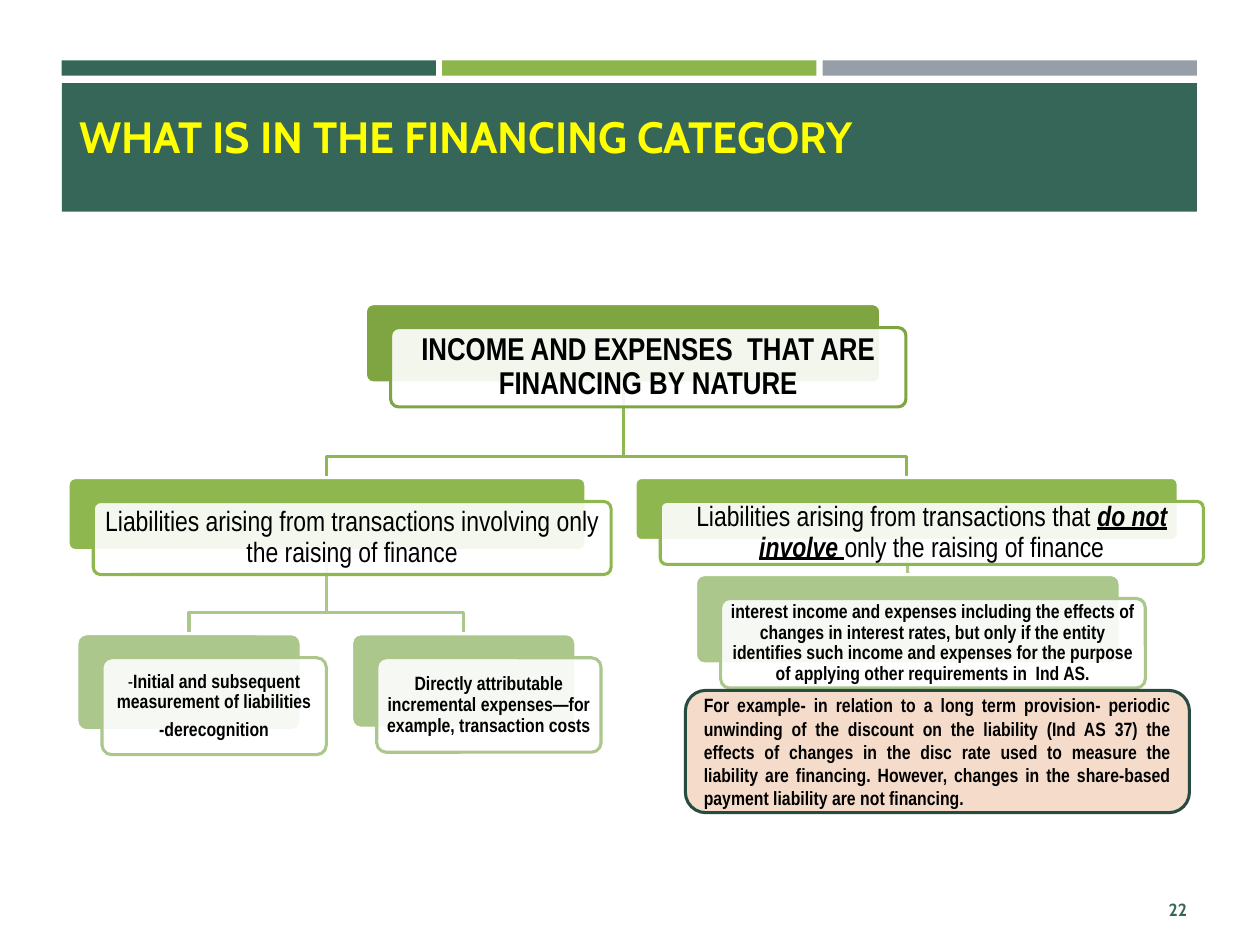
import pptx
import pptx.util
from pptx.dml.color import RGBColor
from pptx.enum.shapes import MSO_CONNECTOR, MSO_SHAPE
from pptx.enum.text import MSO_ANCHOR, PP_ALIGN
from pptx.oxml.ns import qn
from lxml import etree
from pptx.util import Inches, Pt

DARK_GREEN = RGBColor(0x36, 0x66, 0x58)
DEEP_GREEN = RGBColor(0x28, 0x4B, 0x41)
LIME = RGBColor(0x8C, 0xB6, 0x4A)
GREY = RGBColor(0x96, 0x9F, 0xA7)
ROOT_GREEN = RGBColor(0x7F, 0xA5, 0x43)
BRANCH_GREEN = RGBColor(0x8E, 0xB7, 0x4F)
LEAF_GREEN = RGBColor(0xAB, 0xC7, 0x8B)
PEACH = RGBColor(0xF5, 0xDC, 0xCA)
YELLOW = RGBColor(0xFF, 0xFF, 0x00)
WHITE = RGBColor(0xFF, 0xFF, 0xFF)
BLACK = RGBColor(0x00, 0x00, 0x00)

# Cards of the tree: left, top, width, height of the rear panel
ROOT = (2.9, 2.41, 4.09, 0.63)
RAISING = (0.54, 3.79, 4.11, 0.58)
NOT_RAISING = (5.04, 3.79, 4.31, 0.5)
MEASUREMENT = (0.61, 5.03, 1.78, 0.77)
DIRECT_COSTS = (2.79, 5.03, 1.78, 0.75)
INTEREST = (5.52, 4.56, 3.37, 0.71)


def add_run(paragraph, text, font="Arial Narrow", size=11, color=BLACK,
            bold=False, italic=False, underline=False):
    run = paragraph.add_run()
    run.text = text
    run.font.name = font
    run.font.size = Pt(size)
    run.font.color.rgb = color
    run.font.bold = bold
    run.font.italic = italic
    run.font.underline = underline


class SlideBuilder:
    line_width = Pt(1.75)
    card_shift = (0.2, 0.19)
    bend_gap = 0.17

    def __init__(self, slide):
        self.slide = slide
        self.shapes = slide.shapes

    def fill_text(self, shape, paragraphs, align=PP_ALIGN.CENTER, inset=None,
                  spacing=None, gap=0):
        """Fill a shape with paragraphs, each a list of (text, format) runs."""
        frame = shape.text_frame
        frame.word_wrap = True
        frame.vertical_anchor = MSO_ANCHOR.MIDDLE
        if inset is not None:
            frame.margin_left = frame.margin_right = Inches(inset)
            frame.margin_top = frame.margin_bottom = Inches(inset)
        for index, runs in enumerate(paragraphs):
            paragraph = frame.add_paragraph() if index else frame.paragraphs[0]
            paragraph.alignment = align
            if spacing:
                paragraph.line_spacing = spacing
            if index:
                paragraph.space_before = Pt(gap)
            for text, style in runs:
                add_run(paragraph, text, **style)

    def label(self, box, text, align, **style):
        label = self.shapes.add_textbox(*map(Inches, box))
        self.fill_text(label, [[(text, style)]], align)

    def panel(self, box, fill, line=None, kind=MSO_SHAPE.RECTANGLE,
              corner=None, opacity=None):
        panel = self.shapes.add_shape(kind, *map(Inches, box))
        panel.shadow.inherit = False
        panel.fill.solid()
        panel.fill.fore_color.rgb = fill
        if opacity is not None:
            solid_fill = panel._element.spPr.find(qn("a:solidFill"))
            color = solid_fill.find(qn("a:srgbClr"))
            etree.SubElement(color, qn("a:alpha"), val=str(opacity * 1000))
        if corner is not None:
            panel.adjustments[0] = corner
        if line is None:
            panel.line.fill.background()
        else:
            panel.line.color.rgb = line
            panel.line.width = self.line_width
        return panel

    def card(self, box, color, paragraphs, inset):
        """A coloured rear panel with a translucent text panel shifted over it."""
        left, top, width, height = box
        dx, dy = self.card_shift
        rounded = dict(kind=MSO_SHAPE.ROUNDED_RECTANGLE, corner=0.1)
        rear = self.panel(box, color, WHITE, **rounded)
        front = self.panel((left + dx, top + dy, width, height), WHITE, color,
                           opacity=90, **rounded)
        self.fill_text(front, paragraphs, inset=inset, spacing=0.9, gap=4)
        return rear

    def elbow(self, parent, child, color):
        """A bent line from the parent's bottom middle to the child's top middle."""
        start_x, end_x = (box[0] + box[2] / 2 for box in (parent, child))
        start_y, end_y = parent[1] + parent[3], child[1]
        bend_y = end_y - self.bend_gap
        outline = self.shapes.build_freeform(Inches(start_x), Inches(start_y))
        outline.add_line_segments(
            [(Inches(x), Inches(y)) for x, y in
             ((start_x, bend_y), (end_x, bend_y), (end_x, end_y))],
            close=False)
        link = outline.convert_to_shape()
        link.shadow.inherit = False
        link.fill.background()
        link.line.color.rgb = color
        link.line.width = self.line_width

    def connector(self, color):
        link = self.shapes.add_connector(MSO_CONNECTOR.STRAIGHT, 0, 0, 0, 0)
        link.line.color.rgb = color
        link.line.width = self.line_width
        etree.SubElement(link._element.spPr, qn("a:effectLst"))
        return link


def main():
    deck = pptx.Presentation()
    deck.slide_width, deck.slide_height = Inches(10), Inches(7.5)
    page = SlideBuilder(deck.slides.add_slide(deck.slide_layouts[6]))

    # Header band and title
    for column, color in enumerate((DARK_GREEN, LIME, GREY)):
        page.panel((0.49 + column * 3.02, 0.48, 2.97, 0.12), color)
    page.panel((0.49, 0.66, 9.01, 1.02), DARK_GREEN)
    page.label((0.53, 0.69, 9.05, 0.78), "WHAT IS IN THE FINANCING CATEGORY",
               PP_ALIGN.LEFT, font="Cabin", size=25, color=YELLOW, bold=True)

    # Page number
    page.label((8.68, 7.02, 0.84, 0.4), "22", PP_ALIGN.RIGHT,
               font="Cabin", size=10, color=DARK_GREEN, bold=True)

    # Tree links, behind the cards
    interest_link = page.connector(LEAF_GREEN)
    for parent, children, color in (
            (RAISING, (DIRECT_COSTS, MEASUREMENT), LEAF_GREEN),
            (ROOT, (NOT_RAISING, RAISING), BRANCH_GREEN)):
        for child in children:
            page.elbow(parent, child, color)

    # Tree cards
    heading = dict(size=18, bold=True)
    branch = dict(size=16)
    stressed = dict(size=16, bold=True, italic=True, underline=True)
    detail = dict(size=11, bold=True)
    page.card(ROOT, ROOT_GREEN, [[
        ("INCOME AND EXPENSES  THAT ARE FINANCING BY NATURE", heading)]], 0.07)
    page.card(RAISING, BRANCH_GREEN, [[
        ("Liabilities arising from transactions involving only the raising "
         "of finance", branch)]], 0.07)
    page.card(MEASUREMENT, LEAF_GREEN, [
        [("-", dict(size=11)),
         ("Initial and subsequent measurement of liabilities", detail)],
        [("-derecognition", detail)]], 0.05)
    page.card(DIRECT_COSTS, LEAF_GREEN, [[
        ("Directly attributable incremental expenses—for example, "
         "transaction costs", detail)]], 0.05)
    not_raising = page.card(NOT_RAISING, BRANCH_GREEN, [[
        ("Liabilities arising from transactions that ", branch),
        ("do not involve ", stressed),
        ("only the raising of finance", branch)]], 0.07)
    interest = page.card(INTEREST, LEAF_GREEN, [[
        ("interest income and expenses including the effects of changes in "
         "interest rates, but only if the entity identifies such income and "
         "expenses for the purpose of applying other requirements in  Ind AS.",
         detail)]], 0.05)
    interest_link.begin_connect(not_raising, 2)
    interest_link.end_connect(interest, 0)

    # Worked example
    example = page.panel((5.44, 5.48, 4, 0.97), PEACH, DEEP_GREEN,
                         kind=MSO_SHAPE.ROUNDED_RECTANGLE)
    page.fill_text(example, [[
        ("For example- in relation to a long term provision- periodic "
         "unwinding of the discount on the liability (Ind AS 37) the effects "
         "of changes in the disc rate used to measure the liability are "
         "financing. However, changes in the share-based payment liability "
         "are not financing.", detail)]], PP_ALIGN.JUSTIFY)

    deck.save("out.pptx")


if __name__ == "__main__":
    main()
